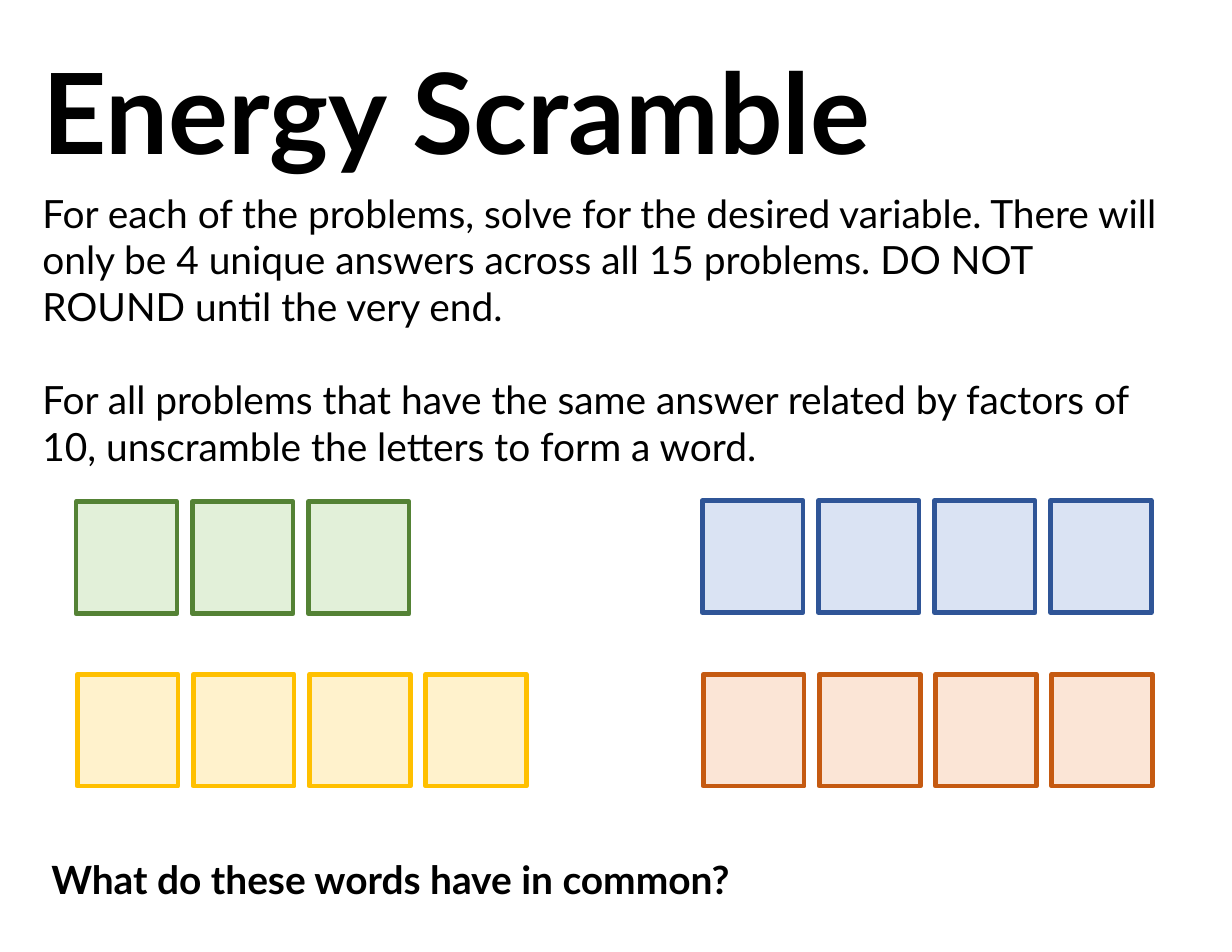
from pptx import Presentation
from pptx.dml.color import RGBColor
from pptx.enum.shapes import MSO_SHAPE
from pptx.enum.text import MSO_AUTO_SIZE
from pptx.util import Inches, Pt

STEP = 3.11 / 3
ROWS = [
    (6.28, 6.02, 4, "FBE5D6", "C55A11"),
    (6.27, 4.47, 4, "DAE3F3", "2F5597"),
    (0.69, 6.02, 4, "FFF2CC", "FFC000"),
    (0.68, 4.48, 3, "E2F0D9", "548235"),
]
TASKS = [
    "For each of the problems, solve for the desired variable. There will only be "
    "4 unique answers across all 15 problems. DO NOT ROUND until the very end.",
    "For all problems that have the same answer related by factors of 10, "
    "unscramble the letters to form a word.",
]


def color(code):
    """Turn a hex string into a colour."""
    return RGBColor.from_string(code)


def add_row(slide, left, top, count, fill, edge):
    """Draw one word's row of letter boxes."""
    for i in range(count):
        box = slide.shapes.add_shape(
            MSO_SHAPE.RECTANGLE, Inches(left + i * STEP), Inches(top), Inches(0.9), Inches(1)
        )
        box.shadow.inherit = False
        box.fill.solid()
        box.fill.fore_color.rgb = color(fill)
        box.line.color.rgb = color(edge)
        box.line.width = Pt(3)


def add_text(slide, place, lines, wrap=False, gap=0, **style):
    """Add a text box with one paragraph per line, spaced by gap points."""
    frame = slide.shapes.add_textbox(*map(Inches, place)).text_frame
    frame.word_wrap = wrap
    frame.auto_size = MSO_AUTO_SIZE.SHAPE_TO_FIT_TEXT
    for i, line in enumerate(lines):
        para = frame.add_paragraph() if i else frame.paragraphs[0]
        para.space_before = Pt(gap if i else 0)
        run = para.add_run()
        run.text = line
        run.font.color.rgb = color("000000")
        for name, value in {"name": "Lato", "size": Pt(25), **style}.items():
            setattr(run.font, name, value)


def main():
    """Build and save the slide."""
    deck = Presentation()
    deck.slide_width, deck.slide_height = Inches(11), Inches(8.5)
    slide = deck.slides.add_slide(deck.slide_layouts[6])
    add_text(slide, (0.28, 0.33, 8.13, 1.31), ["Energy Scramble"], size=Pt(72), bold=True)
    add_text(slide, (0.28, 1.64, 10.25, 2.63), TASKS, wrap=True, gap=30)
    for row in ROWS:
        add_row(slide, *row)
    add_text(slide, (0.36, 7.59, 6.68, 0.52), ["What do these words have in common?"], bold=True)
    deck.save("out.pptx")


if __name__ == "__main__":
    main()
